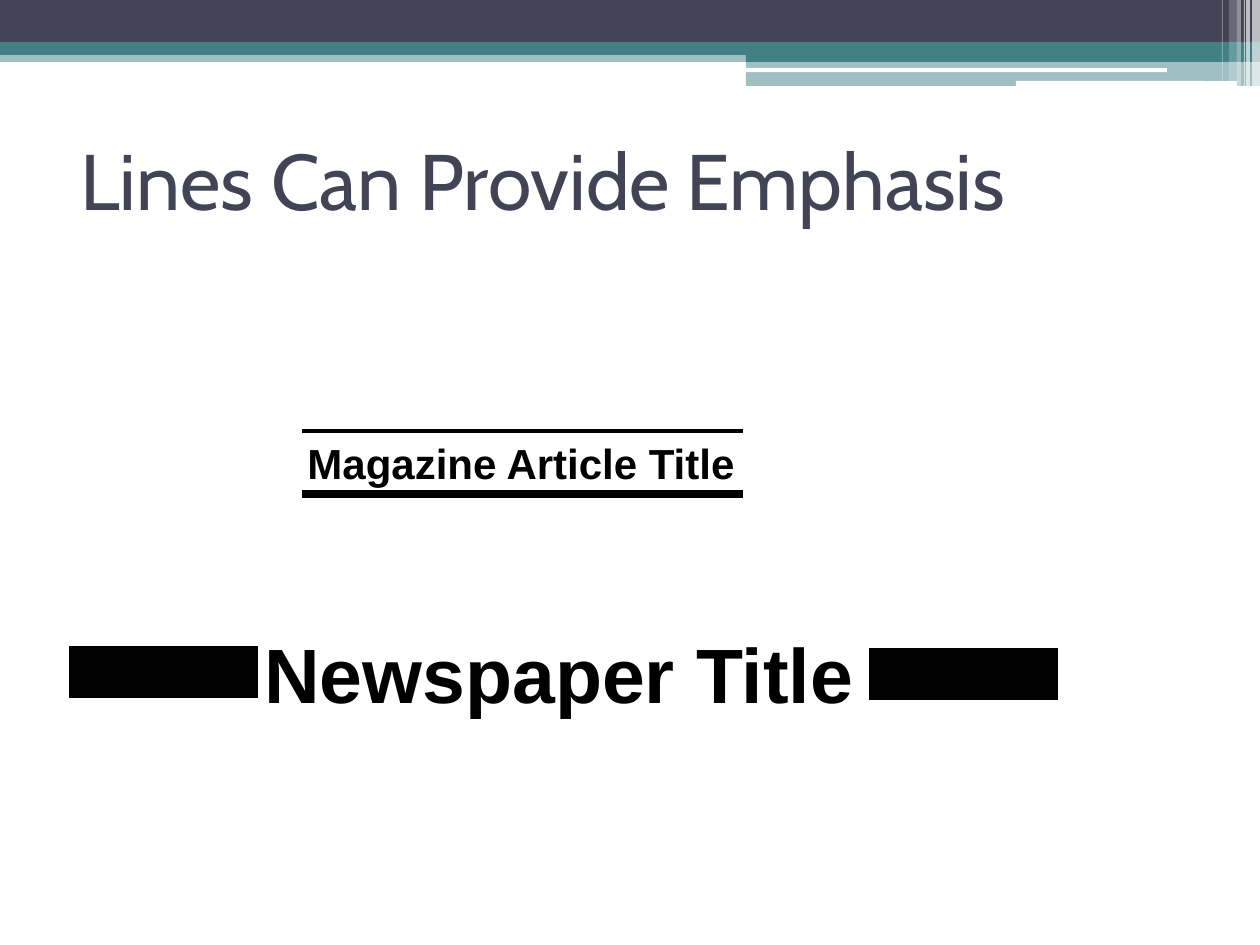
from lxml.etree import SubElement
from pptx import Presentation
from pptx.dml.color import RGBColor
from pptx.enum.shapes import MSO_CONNECTOR, MSO_SHAPE
from pptx.enum.text import MSO_ANCHOR
from pptx.oxml.ns import qn
from pptx.util import Emu, Pt

PX_PER_INCH = 126
NAVY, TEAL, WHITE, BLACK = "424456", "438086", "FFFFFF", "000000"

# left, top, width, height, colour, opacity in percent
HEADER_BANDS = [
    (0, 50, 1260, 12, TEAL, 50),
    (0, 0, 1260, 43, NAVY, 100),
    (0, 42, 1260, 13, TEAL, 100),
    (746, 49, 514, 13, TEAL, 100),
    (746, 61, 514, 25, TEAL, 50),
]
HEADER_SLITS = [(745, 68, 422, 4), (1016, 81, 221, 5)]
# left, width, height, opacity in percent
CORNER_STRIPES = [
    (1252, 8, 86, 65),
    (1246, 4, 86, 65),
    (1244, 1, 86, 60),
    (1237, 4, 86, 40),
    (1229, 8, 81, 20),
    (1222, 1, 81, 30),
]


def px(length):
    return Emu(round(length * 914400 / PX_PER_INCH))


def rgb(colour):
    return RGBColor.from_string(colour)


def add_block(shapes, left, top, width, height, colour, opacity=100,
              kind=MSO_SHAPE.RECTANGLE):
    shape = shapes.add_shape(kind, px(left), px(top), px(width), px(height))
    shape.shadow.inherit = False
    shape.line.fill.background()
    shape.fill.solid()
    shape.fill.fore_color.rgb = rgb(colour)
    if opacity < 100:
        colour_element = shape.fill._xPr.find(qn("a:solidFill"))[0]
        SubElement(colour_element, qn("a:alpha"), val=str(opacity * 1000))


def add_text(shapes, left, top, width, height, runs, anchor=MSO_ANCHOR.TOP):
    """Add one paragraph; each run is its text and a dict of font values."""
    frame = shapes.add_textbox(px(left), px(top), px(width), px(height)).text_frame
    frame.word_wrap = True
    frame.vertical_anchor = anchor
    for text, font_format in runs:
        run = frame.paragraphs[0].add_run()
        run.text = text
        run.font.color.rgb = rgb(font_format["colour"])
        for name in ("name", "size", "bold"):
            setattr(run.font, name, font_format[name])


def add_rule(shapes, left, right, y, weight):
    """Add a horizontal black line, its weight in points."""
    line = shapes.add_connector(MSO_CONNECTOR.STRAIGHT, px(left), px(y), px(right), px(y))
    line.line.width = Pt(weight)
    line.line.color.rgb = rgb(BLACK)
    SubElement(line._element.spPr, qn("a:effectLst"))


def font(name, size, colour, bold=False):
    return {"name": name, "size": Pt(size), "colour": colour, "bold": bold}


def add_header(shapes):
    for band in HEADER_BANDS:
        add_block(shapes, *band)
    for slit in HEADER_SLITS:
        add_block(shapes, *slit, WHITE, kind=MSO_SHAPE.ROUNDED_RECTANGLE)
    for left, width, height, opacity in CORNER_STRIPES:
        add_block(shapes, left, 0, width, height, WHITE, opacity)


def add_ruled_title(slide, text, size, box, rules):
    """Group a bold title with the lines that emphasise it."""
    shapes = slide.shapes.add_group_shape().shapes
    add_text(shapes, *box, [(text, font("Arial", size, BLACK, True))])
    for rule in rules:
        add_rule(shapes, *rule)


def main():
    presentation = Presentation()
    presentation.slide_width, presentation.slide_height = px(1260), px(945)
    slide = presentation.slides.add_slide(presentation.slide_layouts[6])

    add_header(slide.shapes)
    heading = font("Cabin", 45, NAVY)
    add_text(slide.shapes, 68, 105, 1134, 147, [
        ("Lines Can Provide", heading),
        (" ", font("Karla", 40, NAVY)),
        ("Emphasis", heading),
    ], MSO_ANCHOR.MIDDLE)

    add_ruled_title(slide, "Magazine Article Title", 24, (295, 431, 473, 63),
                    [(302, 743, 494, 4.5), (302, 743, 431, 2.25)])
    add_ruled_title(slide, "Newspaper Title", 44, (252, 620, 703, 105),
                    [(69, 258, 672, 30), (869, 1058, 674, 30)])
    presentation.save("out.pptx")


if __name__ == "__main__":
    main()
